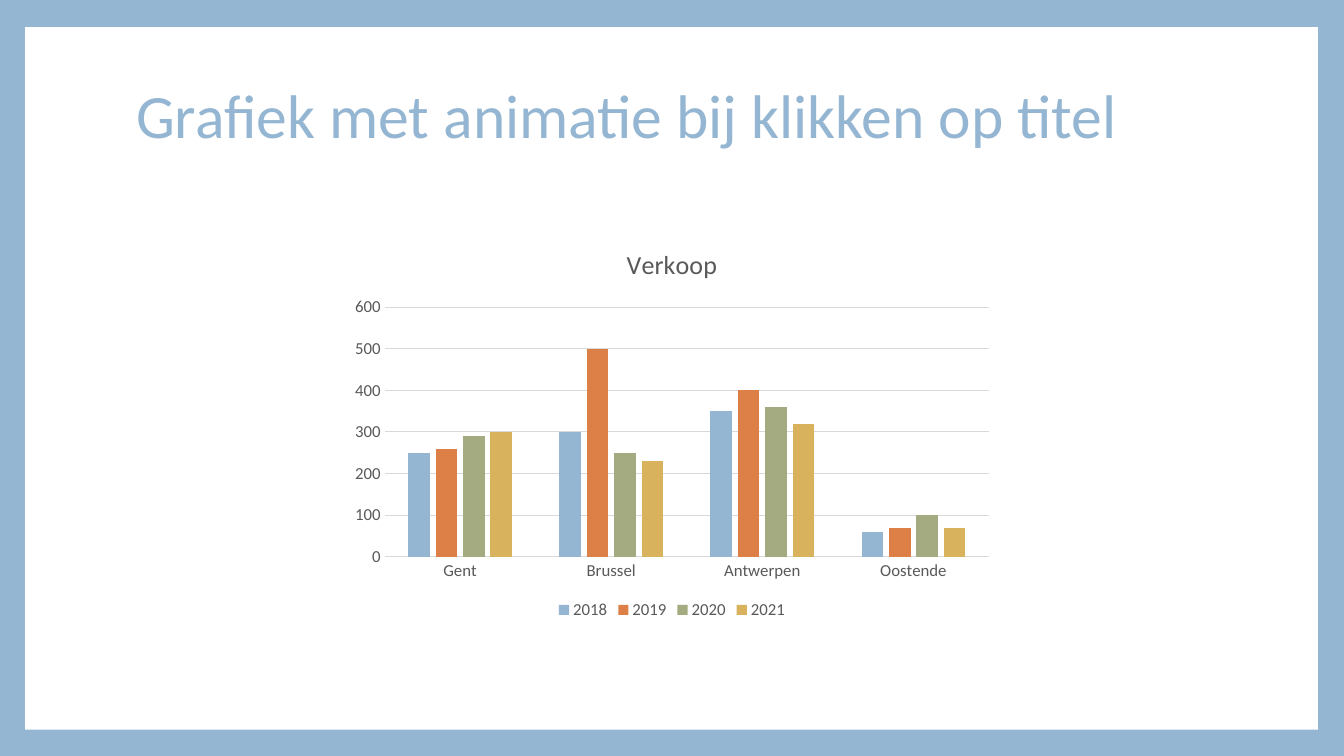
import pptx
import pptx.chart.data
import pptx.dml.color
import pptx.enum.chart
import pptx.enum.shapes
import pptx.enum.text
import pptx.util

RGBColor = pptx.dml.color.RGBColor
BLUE = RGBColor(0x94, 0xB6, 0xD2)
ORANGE = RGBColor(0xDD, 0x80, 0x47)
GREEN = RGBColor(0xA5, 0xAB, 0x81)
YELLOW = RGBColor(0xD8, 0xB2, 0x5C)
WHITE = RGBColor(0xFF, 0xFF, 0xFF)
TEXT_GREY = RGBColor(0x59, 0x59, 0x59)
LINE_GREY = RGBColor(0xD9, 0xD9, 0xD9)

CITIES = ["Gent", "Brussel", "Antwerpen", "Oostende"]
SALES = [
    ("2018", BLUE, [250, 300, 350, 60]),
    ("2019", ORANGE, [260, 500, 400, 70]),
    ("2020", GREEN, [290, 250, 360, 100]),
    ("2021", YELLOW, [300, 230, 320, 70]),
]


def place(left, top, width, height):
    return [pptx.util.Inches(length) for length in (left, top, width, height)]


def style_font(font, size, color):
    font.name = "Calibri"
    font.size = pptx.util.Pt(size)
    font.bold = False
    font.color.rgb = color


deck = pptx.Presentation()
deck.slide_width = pptx.util.Inches(13.33)
deck.slide_height = pptx.util.Inches(7.5)
page = deck.slides.add_slide(deck.slide_layouts[5])

# Blue frame around a white panel
page.background.fill.solid()
page.background.fill.fore_color.rgb = BLUE
panel = page.shapes.add_shape(
    pptx.enum.shapes.MSO_SHAPE.RECTANGLE, *place(0.25, 0.27, 12.82, 6.97))
panel.shadow.inherit = False
panel.fill.solid()
panel.fill.fore_color.rgb = WHITE
panel.line.fill.background()

# Title, in front of the panel
title = page.shapes.title
title.element.addprevious(panel.element)
title.left, title.top, title.width, title.height = place(1.25, 0.67, 10.8, 1.01)
title.text_frame.text = "Grafiek met animatie bij klikken op titel"
title.text_frame.word_wrap = True
title.text_frame.vertical_anchor = pptx.enum.text.MSO_ANCHOR.MIDDLE
para = title.text_frame.paragraphs[0]
para.alignment = pptx.enum.text.PP_ALIGN.LEFT
para.line_spacing = 0.9
style_font(para.runs[0].font, 44, BLUE)

# Sales chart
sales_data = pptx.chart.data.CategoryChartData()
sales_data.categories = CITIES
for year, color, values in SALES:
    sales_data.add_series(year, values)
chart = page.shapes.add_chart(
    pptx.enum.chart.XL_CHART_TYPE.COLUMN_CLUSTERED,
    *place(3.39, 2.26, 6.55, 3.93), sales_data).chart
style_font(chart.font, 12, TEXT_GREY)

chart.has_title = True
chart.chart_title.include_in_layout = False
chart.chart_title.text_frame.text = "Verkoop"
style_font(chart.chart_title.text_frame.paragraphs[0].runs[0].font, 18.6, TEXT_GREY)

chart.has_legend = True
chart.legend.position = pptx.enum.chart.XL_LEGEND_POSITION.BOTTOM
chart.legend.include_in_layout = False
style_font(chart.legend.font, 12, TEXT_GREY)

# Columns
plot = chart.plots[0]
plot.gap_width = 219
plot.overlap = -27
plot.vary_by_categories = False
for series, (year, color, values) in zip(plot.series, SALES):
    series.format.fill.solid()
    series.format.fill.fore_color.rgb = color

# Axes and gridlines
for axis in (chart.category_axis, chart.value_axis):
    axis.major_tick_mark = pptx.enum.chart.XL_TICK_MARK.NONE
    axis.minor_tick_mark = pptx.enum.chart.XL_TICK_MARK.NONE
    style_font(axis.tick_labels.font, 12, TEXT_GREY)
chart.value_axis.minimum_scale = 0
chart.value_axis.maximum_scale = 600
chart.value_axis.major_unit = 100
chart.value_axis.has_major_gridlines = True
chart.value_axis.format.line.fill.background()
for line in (chart.category_axis.format.line,
             chart.value_axis.major_gridlines.format.line):
    line.color.rgb = LINE_GREY
    line.width = pptx.util.Pt(0.75)

deck.save("out.pptx")
